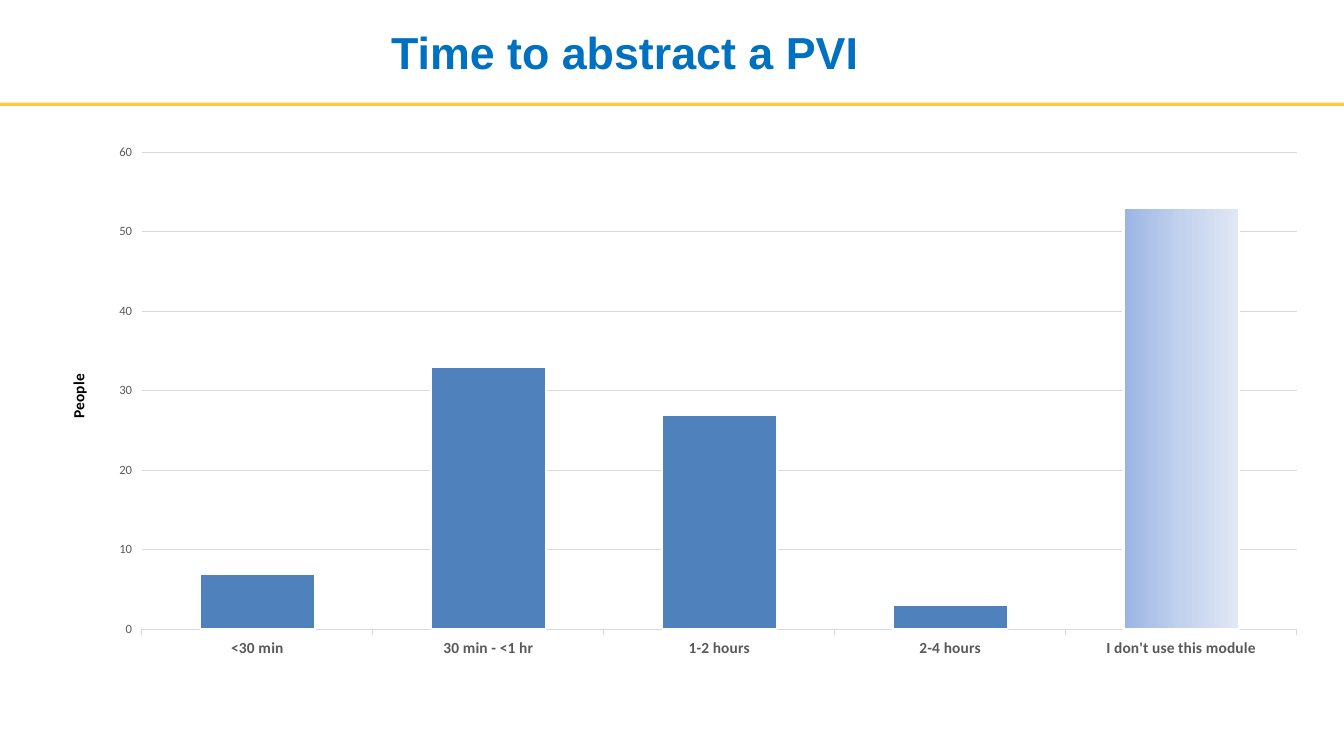
import copy
from dataclasses import dataclass

import pptx
import pptx.chart.data
import pptx.dml.color
import pptx.enum.chart
import pptx.enum.shapes
import pptx.enum.text
import pptx.oxml
import pptx.oxml.ns
import pptx.util
from pptx.util import Cm

COLORS = {
    "title": "0070C0",
    "rule": "FFC843",
    "bar": "4F81BD",
    "outline": "FFFFFF",
    "grid": "D9D9D9",
    "axis_text": "595959",
    "text": "000000",
}
UNUSED_GRADIENT = [(0, "9AB5E4"), (0.5, "C2D1ED"), (1, "E1E8F5")]


@dataclass
class Bar:
    label: str
    people: int
    gradient: bool = False


BARS = [
    Bar("<30 min", 7),
    Bar("30 min - <1 hr", 33),
    Bar("1-2 hours", 27),
    Bar("2-4 hours", 3),
    Bar("I don't use this module", 53, gradient=True),
]


def rgb(value: str) -> pptx.dml.color.RGBColor:
    return pptx.dml.color.RGBColor.from_string(value)


def set_font(font, size: float, color: str, bold: bool = False, name: str = "Calibri") -> None:
    font.size, font.bold, font.name = pptx.util.Pt(size), bold, name
    font.color.rgb = rgb(COLORS[color])


def set_line(line, color: str, width: float) -> None:
    line.color.rgb = rgb(COLORS[color])
    line.width = pptx.util.Pt(width)


def write(sp, text: str, *, size: float, color: str, bold: bool = True,
          name: str = "Calibri", anchor=pptx.enum.text.MSO_ANCHOR.TOP) -> None:
    tf = sp.text_frame
    tf.word_wrap = True
    tf.vertical_anchor = anchor
    p = tf.paragraphs[0]
    p.alignment = pptx.enum.text.PP_ALIGN.LEFT
    r = p.add_run()
    r.text = text
    set_font(r.font, size, color, bold, name)


def fill_gradient(fill, stops: list[tuple[float, str]], chart) -> None:
    fill.gradient()
    fill.gradient_angle = 0
    stop_list = chart._chartSpace.xpath(".//a:gsLst")[0]
    while len(stop_list) < len(stops):
        stop_list.append(copy.deepcopy(stop_list[0]))
    for stop, (position, color) in zip(fill.gradient_stops, stops):
        stop.position = position
        stop.color.rgb = rgb(color)


def set_plot_area(chart, x: float, y: float, w: float, h: float) -> None:
    plot_area = chart._chartSpace.xpath(".//c:plotArea")[0]
    for old in plot_area.xpath("c:layout"):
        plot_area.remove(old)
    values = {"layoutTarget": "inner", "xMode": "edge", "yMode": "edge",
              "x": x, "y": y, "w": w, "h": h}
    parts = "".join(f'<c:{tag} val="{value}"/>' for tag, value in values.items())
    plot_area.insert(0, pptx.oxml.parse_xml(
        f'<c:layout {pptx.oxml.ns.nsdecls("c")}>'
        f"<c:manualLayout>{parts}</c:manualLayout></c:layout>"))


def add_bar_chart(s, bars: list[Bar]) -> None:
    data = pptx.chart.data.CategoryChartData()
    data.categories = [bar.label for bar in bars]
    data.add_series("Series 1", [bar.people for bar in bars])
    chart = s.shapes.add_chart(
        pptx.enum.chart.XL_CHART_TYPE.COLUMN_CLUSTERED,
        Cm(2.34), Cm(3.43), Cm(30.96), Cm(13.51), data).chart
    chart.has_legend = False
    chart.has_title = False
    set_font(chart.font, 10, "text")
    set_plot_area(chart, 0.04, 0.03, 0.94, 0.89)

    # Axes
    cat, val = chart.category_axis, chart.value_axis
    set_font(cat.tick_labels.font, 11, "axis_text", bold=True)
    set_line(cat.format.line, "grid", 0.75)
    set_font(val.tick_labels.font, 9, "axis_text")
    val.format.line.fill.background()
    val.minimum_scale, val.maximum_scale, val.major_unit = 0, 60, 10
    set_line(val.major_gridlines.format.line, "grid", 0.75)

    # Bars
    plot = chart.plots[0]
    plot.gap_width = 100
    plot.vary_by_categories = False
    series = plot.series[0]
    series.invert_if_negative = False
    series.format.fill.solid()
    series.format.fill.fore_color.rgb = rgb(COLORS["bar"])
    set_line(series.format.line, "outline", 1.5)
    for i, bar in enumerate(bars):
        if bar.gradient:
            point = series.points[i].format
            fill_gradient(point.fill, UNUSED_GRADIENT, chart)
            set_line(point.line, "outline", 1.5)


def main() -> None:
    prs = pptx.Presentation()
    prs.slide_width, prs.slide_height = Cm(33.87), Cm(19.05)
    s = prs.slides.add_slide(prs.slide_layouts[5])

    # Rule under the title
    sp = s.shapes.add_shape(pptx.enum.shapes.MSO_SHAPE.RECTANGLE,
                            0, Cm(2.59), prs.slide_width, Cm(0.08))
    sp.shadow.inherit = False
    sp.fill.solid()
    sp.fill.fore_color.rgb = rgb(COLORS["rule"])
    sp.line.fill.background()

    add_bar_chart(s, BARS)

    # Title
    title = s.shapes.title
    title.left, title.top, title.width, title.height = Cm(9.6), 0, Cm(22.02), Cm(2.59)
    write(title, "Time to abstract a PVI", size=32, color="title", name="Arial",
          anchor=pptx.enum.text.MSO_ANCHOR.MIDDLE)

    # Value axis caption
    caption = s.shapes.add_textbox(Cm(-2.31), Cm(6.12), Cm(8.59), Cm(0.74))
    caption.rotation = 270
    write(caption, "People", size=11, color="text")

    prs.save("out.pptx")


if __name__ == "__main__":
    main()
